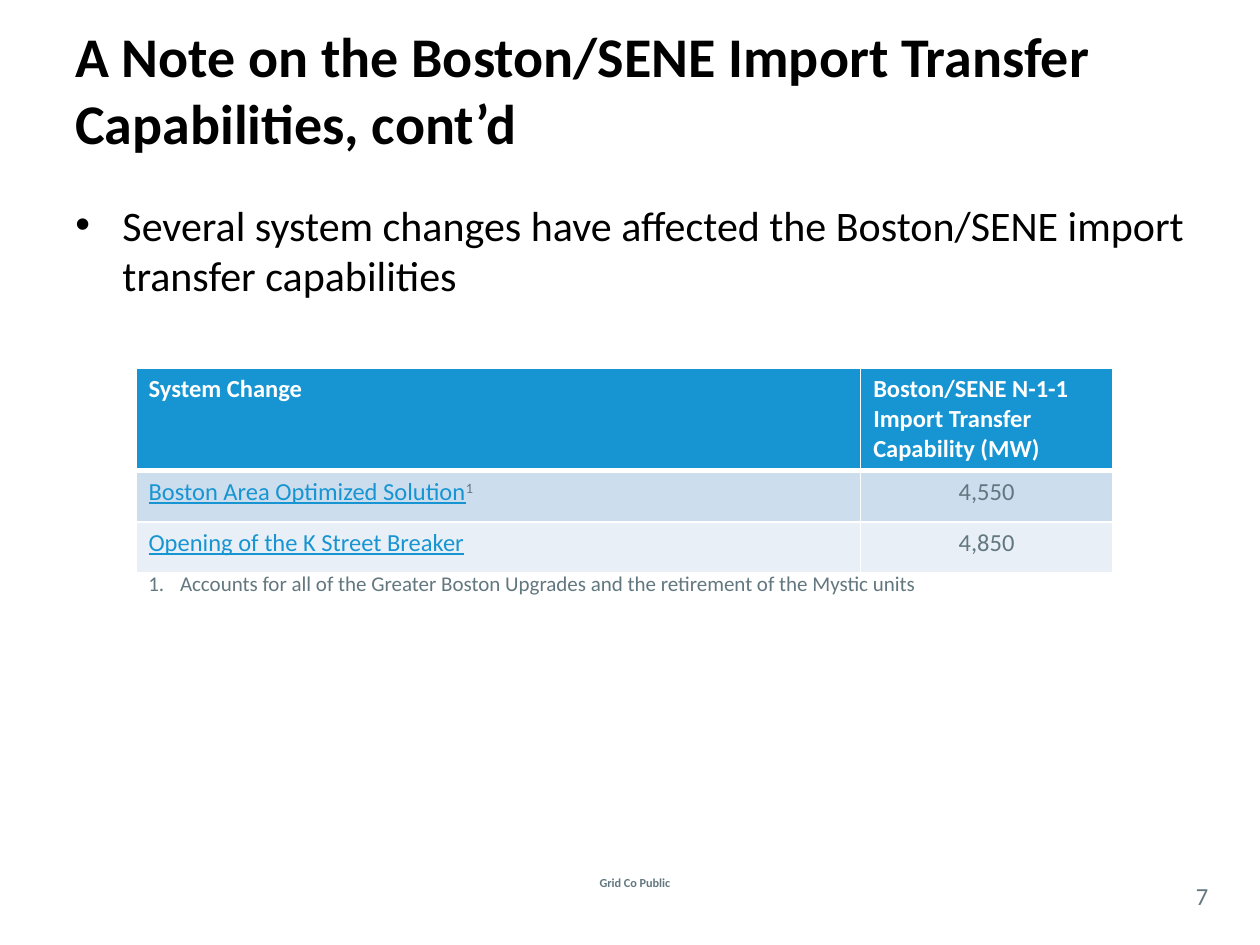
"""Build the slide on Boston/SENE import transfer capabilities."""
from dataclasses import dataclass

from lxml.etree import SubElement as Sub
from pptx import Presentation
from pptx.dml.color import RGBColor as Rgb
from pptx.enum.text import MSO_ANCHOR as Anchor, PP_ALIGN as Align
from pptx.oxml.ns import qn
from pptx.util import Cm, Pt


@dataclass(frozen=True)
class Theme:
    face: str = "Calibri"
    ink: str = "000000"
    gray: str = "62777F"
    blue: str = "1795D2"
    white: str = "FFFFFF"
    bands: tuple = ("1795D2", "CCDDEE", "E8EFF7")
    title: int = 32
    body: int = 24
    cell: int = 14
    note: int = 12
    foot: int = 7


theme = Theme()


def style(font, size, color, bold=False):
    font.name, font.size, font.bold = theme.face, Pt(size), bold
    font.color.rgb = Rgb.from_string(color)


def write(slide, text, area, size, color, bold=False, align=Align.LEFT,
          anchor=Anchor.TOP, mark=None, indent=0):
    box = slide.shapes.add_textbox(*(Cm(n) for n in area))
    frame = box.text_frame
    frame.word_wrap, frame.vertical_anchor = True, anchor
    para = frame.paragraphs[0]
    para.text, para.alignment = text, align
    if mark:
        props = para._p.get_or_add_pPr()
        props.set("marL", str(Cm(indent)))
        props.set("indent", str(-Cm(indent)))
        tag, attrs = mark
        Sub(props, qn("a:buFont"), typeface="Arial" if tag == "a:buChar" else theme.face)
        Sub(props, qn(tag), attrs)
    style(para.font, size, color, bold)
    return frame


deck = Presentation()
deck.slide_width, deck.slide_height = Cm(25.4), Cm(19.05)
slide = deck.slides.add_slide(deck.slide_layouts[6])

write(slide, "Grid Co Public", (10.36, 17.58, 4.88, 0.43), theme.foot, theme.gray,
      bold=True, align=Align.CENTER, anchor=Anchor.MIDDLE)
page = write(slide, "7", (23.7, 17.68, 1.07, 0.74), theme.cell, theme.gray,
             align=Align.CENTER, anchor=Anchor.MIDDLE)
page.margin_left = page.margin_right = page.margin_top = page.margin_bottom = 0
write(slide, "A Note on the Boston/SENE Import Transfer Capabilities, cont’d",
      (1.27, 0.2, 22.86, 3.18), theme.title, theme.ink, bold=True, anchor=Anchor.MIDDLE)
write(slide, "Several system changes have affected the Boston/SENE import transfer capabilities",
      (1.27, 3.89, 22.86, 13.26), theme.body, theme.ink,
      mark=("a:buChar", {"char": "•"}), indent=0.95)

rows = [
    ("System Change", "Boston/SENE N-1-1 Import Transfer Capability (MW)"),
    ("Boston Area Optimized Solution", "4,550"),
    ("Opening of the K Street Breaker", "4,850"),
]
table = slide.shapes.add_table(3, 2, Cm(2.74), Cm(7.42), Cm(19.69), Cm(4.13)).table
for col, width in zip(table.columns, (14.61, 5.08)):
    col.width = Cm(width)
for row, high in zip(table.rows, (2.07, 1.03, 1.03)):
    row.height = Cm(high)

for r, texts in enumerate(rows):
    for c, text in enumerate(texts):
        cell = table.cell(r, c)
        para = cell.text_frame.paragraphs[0]
        para.text = text
        para.alignment = Align.CENTER if r and c else Align.LEFT
        color = theme.white if r == 0 else theme.gray if c else theme.blue
        style(para.font, theme.cell, color, bold=r == 0)
        if r and not c:
            para.runs[0].font.underline = True
        props = cell._tc.get_or_add_tcPr()
        for side in "LRTB":
            thick = 3 if (r, side) in ((0, "B"), (1, "T")) else 1
            edge = Sub(props, qn(f"a:ln{side}"), w=str(Pt(thick)))
            Sub(Sub(edge, qn("a:solidFill")), qn("a:srgbClr"), val=theme.white)
        cell.fill.solid()
        cell.fill.fore_color.rgb = Rgb.from_string(theme.bands[r])

mark = table.cell(1, 0).text_frame.paragraphs[0].add_run()
mark.text = "1"
style(mark.font, theme.cell, theme.gray)
mark._r.get_or_add_rPr().set("baseline", "30000")

write(slide, "Accounts for all of the Greater Boston Upgrades and the retirement of the Mystic units",
      (2.74, 11.38, 19.69, 0.76), theme.note, theme.gray,
      mark=("a:buAutoNum", {"type": "arabicPeriod"}), indent=0.64)

deck.save("out.pptx")
